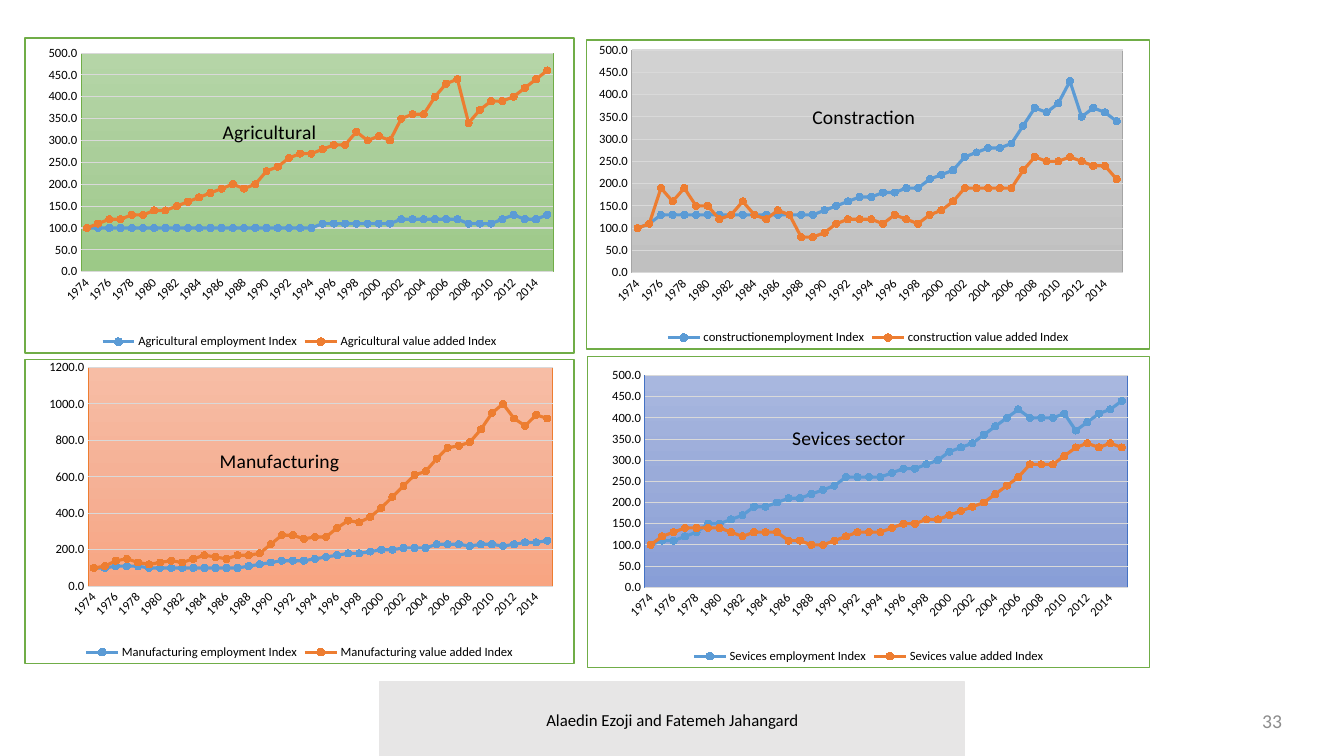
from dataclasses import dataclass

from pptx import Presentation
from pptx.chart.data import CategoryChartData
from pptx.dml.color import RGBColor
from pptx.enum.chart import XL_CHART_TYPE, XL_LEGEND_POSITION, XL_MARKER_STYLE, XL_TICK_MARK
from pptx.enum.shapes import MSO_SHAPE
from pptx.enum.text import MSO_ANCHOR, PP_ALIGN
from pptx.oxml import parse_xml
from pptx.oxml.ns import nsdecls, qn
from pptx.util import Pt

LINE_MARKERS = XL_CHART_TYPE.LINE_MARKERS
LEGEND_BOTTOM = XL_LEGEND_POSITION.BOTTOM
CIRCLE = XL_MARKER_STYLE.CIRCLE
NO_TICK = XL_TICK_MARK.NONE
RECT = MSO_SHAPE.RECTANGLE
LEFT, CENTER = PP_ALIGN.LEFT, PP_ALIGN.CENTER
TOP, MIDDLE = MSO_ANCHOR.TOP, MSO_ANCHOR.MIDDLE

PX = 9144  # 100 px to the inch


@dataclass(frozen=True)
class Theme:
    font: str = "Calibri"
    text: str = "000000"
    muted: str = "8C8C8C"
    paper: str = "FFFFFF"
    band: str = "E7E6E6"
    grid: str = "D9D9D9"
    border: str = "70AD47"
    series: tuple = ("5B9BD5", "ED7D31")
    base_size: int = 10
    axis_size: int = 9
    title_size: int = 14
    footer_size: int = 12
    number_size: int = 14


THEME = Theme()
YEARS = [str(year) for year in range(1974, 2016)]

# Boxes and plots are left, top, width, height in px; plots and titles lie inside the chart.
# Index values are in tens, one per year; "10x21" stands for 21 years at 10.
SECTORS = [
    dict(title="Agricultural", box=(24, 37, 546, 314), title_at=(193, 77),
         plot=(56, 15, 469, 218), top=500, step=50,
         gradient=("B5D5A7", "AACE9A", "9CC987"), edge="70AD47",
         series={
             "Agricultural employment Index":
                 "10x21 11x7 12x6 11x3 12 13 12x2 13",
             "Agricultural value added Index":
                 "10 11 12x2 13x2 14x2 15 16 17 18 19 20 19 20 23 24 26 27x2 28 29x2 32 "
                 "30 31 30 35 36x2 40 43 44 34 37 39x2 40 42 44 46",
         }),
    dict(title="Manufacturing", box=(24, 356, 546, 303), title_at=(190, 84),
         plot=(63, 8, 462, 218), top=1200, step=200,
         gradient=("F7BDA5", "F5B196", "F8A582"), edge="ED7D31",
         series={
             "Manufacturing employment Index":
                 "10x2 11x3 10x9 11 12 13 14x3 15 16 17 18x2 19 20x2 21x3 23x3 22 23x2 "
                 "22 23 24x2 25",
             "Manufacturing value added Index":
                 "10 11 14 15 13 12 13 14 13 15 17 16 15 17x2 18 23 28x2 26 27x2 32 36 "
                 "35 38 43 49 55 61 63 70 76 77 79 86 95 100 92 88 94 92",
         }),
    dict(title="Constraction", box=(581, 39, 560, 308), title_at=(221, 60),
         plot=(45, 10, 488, 222), top=500, step=50,
         gradient=("D2D2D2", "C8C8C8", "C0C0C0"), edge="A5A5A5",
         series={
             "constructionemployment Index":
                 "10 11 13x14 14 15 16 17x2 18x2 19x2 21 22 23 26 27 28x2 29 33 37 36 "
                 "38 43 35 37 36 34",
             "construction value added Index":
                 "10 11 19 16 19 15x2 12 13 16 13 12 14 13 8x2 9 11 12x3 11 13 12 11 "
                 "13 14 16 19x5 23 26 25x2 26 25 24x2 21",
         }),
    dict(title="Sevices sector", box=(582, 353, 559, 310), title_at=(200, 64),
         plot=(57, 19, 480, 211), top=500, step=50,
         gradient=("A8B7DF", "9AABD9", "889ED7"), edge="4472C4",
         series={
             "Sevices employment Index":
                 "10 11x2 12 13 15x2 16 17 19x2 20 21x2 22 23 24 26x4 27 28x2 29 30 32 "
                 "33 34 36 38 40 42 40x3 41 37 39 41 42 44",
             "Sevices value added Index":
                 "10 12 13 14x4 13 12 13x3 11x2 10x2 11 12 13x3 14 15x2 16x2 17 18 19 "
                 "20 22 24 26 29x3 31 33 34 33 34 33",
         }),
]


def emu(box):
    return [value * PX for value in box]


def index_values(runs):
    """Expand value runs in tens into one index value per year."""
    values = []
    for run in runs.split():
        tens, _, count = run.partition("x")
        values += [int(tens) * 10] * int(count or 1)
    return values


def set_font(font, size, color=THEME.text):
    for name, value in dict(name=THEME.font, size=Pt(size), bold=False).items():
        setattr(font, name, value)
    font.color.rgb = RGBColor.from_string(color)


def set_line(line, color, width):
    line.color.rgb = RGBColor.from_string(color)
    line.width = Pt(width)


def solid(color):
    return f'<a:solidFill><a:srgbClr val="{color}"/></a:solidFill>'


def area_format(fill, color, width):
    """Return the c:spPr of a chart area or plot area."""
    return parse_xml(f'<c:spPr {nsdecls("c", "a")}>{fill}'
                     f'<a:ln w="{Pt(width)}">{solid(color)}</a:ln></c:spPr>')


def vertical_gradient(colors):
    stops = "".join(f'<a:gs pos="{i * 50000}"><a:srgbClr val="{c}"/></a:gs>'
                    for i, c in enumerate(colors))
    return f'<a:gradFill><a:gsLst>{stops}</a:gsLst><a:lin ang="5400000" scaled="0"/></a:gradFill>'


def set_layout(parent, index, place, chart_box):
    """Place a chart part given as x, y or x, y, w, h in px inside the chart."""
    for old in parent.findall(qn("c:layout")):
        parent.remove(old)
    target = '<c:layoutTarget val="inner"/>' if len(place) == 4 else ""
    modes = '<c:xMode val="edge"/><c:yMode val="edge"/>'
    width, height = chart_box[2:]
    values = "".join(f'<c:{key} val="{px / whole:.4f}"/>' for key, px, whole
                     in zip("xywh", place, (width, height) * 2))
    parent.insert(index, parse_xml(
        f'<c:layout {nsdecls("c")}><c:manualLayout>{target}{modes}{values}'
        '</c:manualLayout></c:layout>'))


def format_title(chart, sector):
    title = chart.chart_title
    r = title.text_frame.paragraphs[0].add_run()
    r.text = sector["title"]
    set_font(r.font, THEME.title_size)
    set_layout(title._element, 1, sector["title_at"], sector["box"])
    title._element.find(qn("c:overlay")).set("val", "1")


def format_axes(chart, sector):
    years, values = chart.category_axis, chart.value_axis
    for axis in (years, values):
        axis.major_tick_mark = axis.minor_tick_mark = NO_TICK
        set_font(axis.tick_labels.font, THEME.axis_size)
    set_line(years.format.line, THEME.grid, 0.75)
    body = years._element.find(qn("c:txPr")).find(qn("a:bodyPr"))
    body.set("rot", "-2700000")
    years._element.find(qn("c:noMultiLvlLbl")).addprevious(
        parse_xml(f'<c:tickLblSkip {nsdecls("c")} val="2"/>'))
    scale = dict(minimum_scale=0, maximum_scale=sector["top"], major_unit=sector["step"])
    for name, value in scale.items():
        setattr(values, name, value)
    values.tick_labels.number_format = "0.0"
    values.tick_labels.number_format_is_linked = False
    values.format.line.fill.background()
    set_line(values.major_gridlines.format.line, THEME.grid, 0.75)


def format_series(chart):
    for series, color in zip(chart.plots[0].series, THEME.series):
        series.smooth = False
        set_line(series.format.line, color, 2.25)
        marker = series.marker
        marker.style, marker.size = CIRCLE, 5
        marker.format.fill.solid()
        marker.format.fill.fore_color.rgb = RGBColor.from_string(color)
        set_line(marker.format.line, color, 0.75)


def add_sector_chart(s, sector):
    data = CategoryChartData(number_format="0.0")
    data.categories = YEARS
    for name, runs in sector["series"].items():
        data.add_series(name, index_values(runs))
    chart = s.shapes.add_chart(LINE_MARKERS, *emu(sector["box"]), data).chart
    set_font(chart.font, THEME.base_size)
    chart.plots[0].vary_by_categories = False
    chart.has_legend = True
    chart.legend.position = LEGEND_BOTTOM
    chart.legend.include_in_layout = False
    set_font(chart.legend.font, THEME.axis_size)
    format_title(chart, sector)
    format_axes(chart, sector)
    format_series(chart)
    chart_xml = chart._chartSpace.find(qn("c:chart"))
    chart_xml.addnext(area_format(solid(THEME.paper), THEME.border, 1))
    plot_area = chart_xml.find(qn("c:plotArea"))
    set_layout(plot_area, 0, sector["plot"], sector["box"])
    plot_area.append(area_format(vertical_gradient(sector["gradient"]), sector["edge"], 0.5))


def add_band(s, box):
    band = s.shapes.add_shape(RECT, *emu(box))
    band.shadow.inherit = False
    band.fill.solid()
    band.fill.fore_color.rgb = RGBColor.from_string(THEME.band)
    set_line(band.line, THEME.band, 1)


def add_text(s, box, text, size, color, align, anchor):
    tf = s.shapes.add_textbox(*emu(box)).text_frame
    tf.word_wrap, tf.vertical_anchor = True, anchor
    p = tf.paragraphs[0]
    p.alignment = align
    r = p.add_run()
    r.text = text
    set_font(r.font, size, color)


def main():
    prs = Presentation()
    prs.slide_width, prs.slide_height = emu((1333, 750))
    s = prs.slides.add_slide(prs.slide_layouts[6])
    add_band(s, (377, 676, 579, 81))
    add_text(s, (463, 699, 408, 30), "Alaedin Ezoji and Fatemeh Jahangard",
             THEME.footer_size, THEME.text, CENTER, TOP)
    add_text(s, (1242, 695, 54, 40), "33", THEME.number_size, THEME.muted, LEFT, MIDDLE)
    for sector in SECTORS:
        add_sector_chart(s, sector)
    prs.save("out.pptx")


if __name__ == "__main__":
    main()
